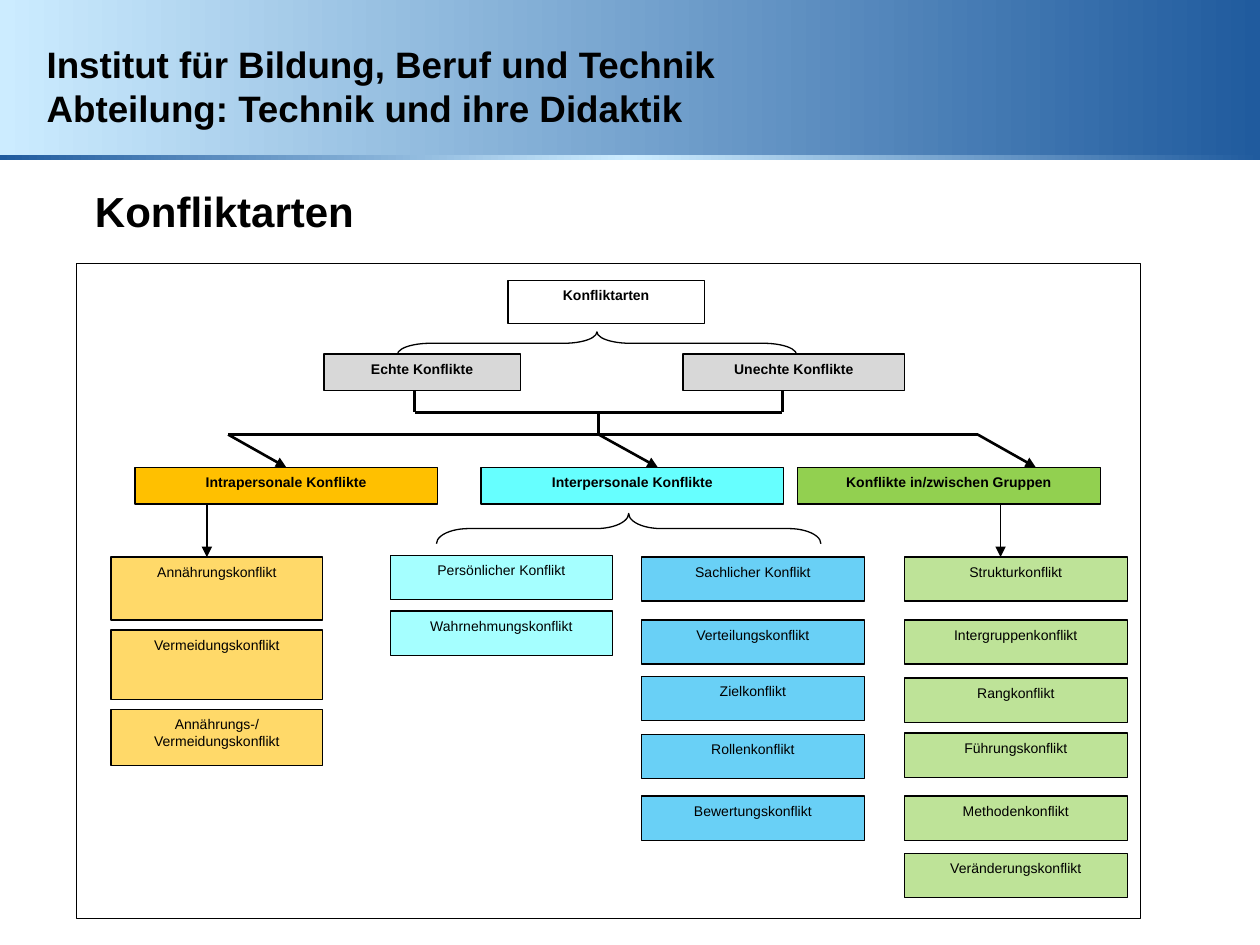
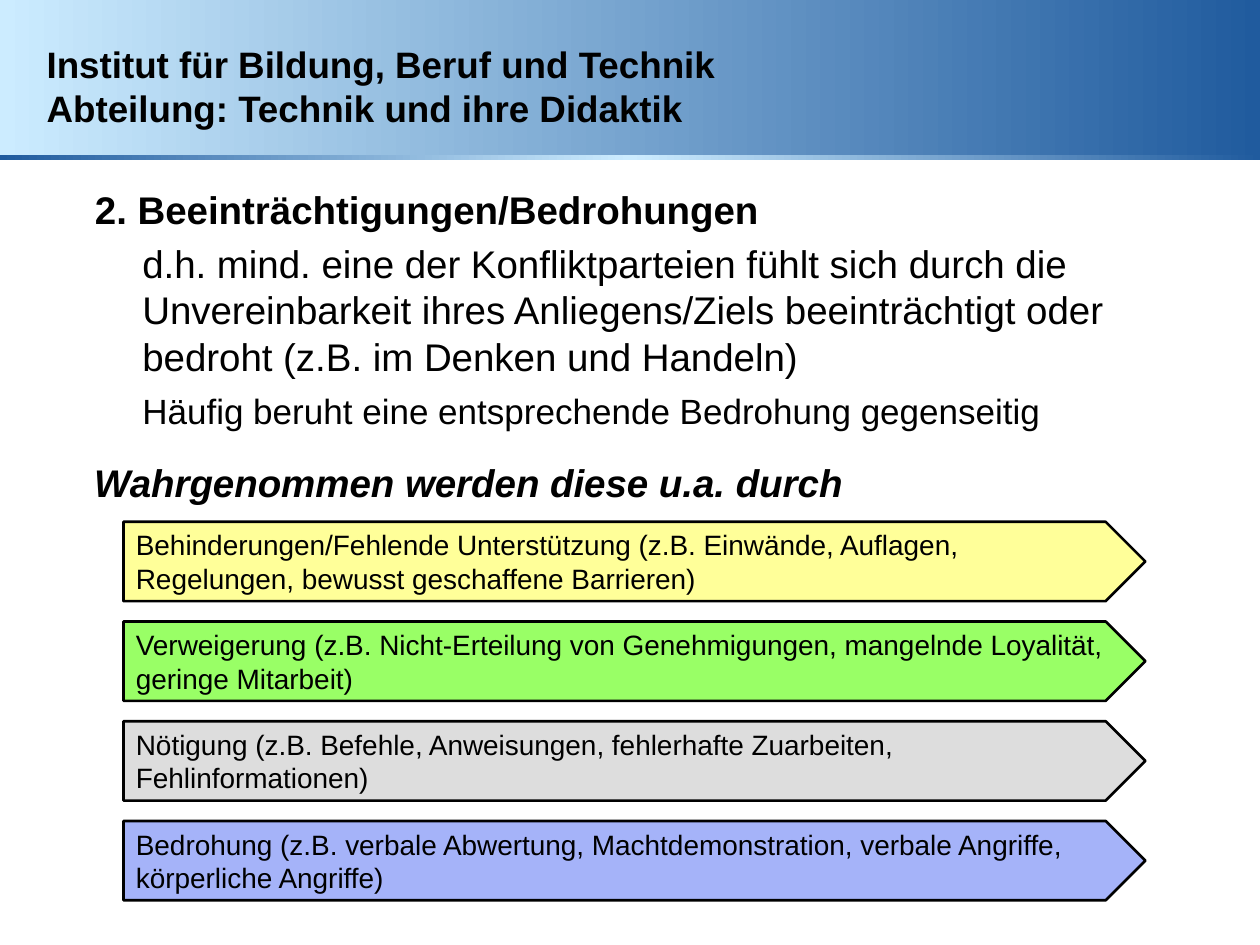
from dataclasses import dataclass
from typing import NamedTuple

from lxml.etree import SubElement
from pptx import Presentation
from pptx.dml.color import RGBColor
from pptx.enum.shapes import MSO_CONNECTOR, MSO_SHAPE
from pptx.enum.text import MSO_ANCHOR, MSO_AUTO_SIZE, PP_ALIGN
from pptx.oxml.ns import qn
from pptx.util import Cm, Pt

RECTANGLE = MSO_SHAPE.RECTANGLE
PENTAGON = MSO_SHAPE.PENTAGON
BRACE = MSO_SHAPE.RIGHT_BRACE
STRAIGHT = MSO_CONNECTOR.STRAIGHT
TOP, MIDDLE = MSO_ANCHOR.TOP, MSO_ANCHOR.MIDDLE
LEFT, CENTER = PP_ALIGN.LEFT, PP_ALIGN.CENTER
NO_AUTOFIT = MSO_AUTO_SIZE.NONE
TITLE_ONLY = 5
TOP_SIDE = 0


@dataclass(frozen=True)
class Theme:
    font: str = "Arial"
    ink: str = "000000"
    paper: str = "FFFFFF"
    sky: str = "CCECFF"
    navy: str = "205B9E"
    grey: str = "D8D8D8"
    amber: str = "FFC000"
    cyan: str = "66FFFF"
    blue: str = "00B0F0"
    green: str = "92D050"
    yellow: str = "FFFF99"
    lime: str = "99FF66"
    silver: str = "DDDDDD"
    lilac: str = "A5B3F9"
    tint: int = 59
    topic: float = 24
    header: float = 21
    body: float = 22
    remark: float = 20
    sign: float = 16
    node: float = 8
    thin: float = 0.75
    thick: float = 1.5


THEME = Theme()


class Box(NamedTuple):
    left: float
    top: float
    width: float
    height: float

    def lengths(self) -> tuple:
        return tuple(Cm(value) for value in self)


class Node(NamedTuple):
    text: str
    box: Box
    fill: str


class Card(NamedTuple):
    text: str
    top: float
    height: float = 0.89


class Column(NamedTuple):
    left: float
    width: float
    fill: str
    cards: tuple


class Link(NamedTuple):
    x1: float
    y1: float
    x2: float
    y2: float
    weight: float = THEME.thick
    arrow: bool = False


class Brace(NamedTuple):
    box: Box
    curl: float


class Sign(NamedTuple):
    text: str
    fill: str


HEADER = ("Institut für Bildung, Beruf und Technik",
          "Abteilung: Technik und ihre Didaktik")
HEADER_BOX = Box(0.69, 0.53, 16.28, 2.39)
TITLE_BOX = Box(1.66, 3.62, 21.6, 1.2)
BAND = Box(0, 0, 25.4, 3.2)
STRIP = Box(0, 3.12, 25.4, 0.1)

CHART_FRAME = Box(1.55, 5.31, 21.44, 13.21)
INTRAPERSONAL = Node("Intrapersonale Konflikte", Box(2.72, 9.42, 6.1, 0.74), THEME.amber)
NODES = (
    Node("Konfliktarten", Box(10.24, 5.66, 3.96, 0.86), THEME.paper),
    Node("Echte Konflikte", Box(6.53, 7.14, 3.96, 0.74), THEME.grey),
    Node("Unechte Konflikte", Box(13.77, 7.14, 4.47, 0.74), THEME.grey),
    Node("Interpersonale Konflikte", Box(9.7, 9.42, 6.1, 0.74), THEME.cyan),
    Node("Konflikte in/zwischen Gruppen", Box(16.08, 9.42, 6.1, 0.74), THEME.green),
)
COLUMNS = (
    Column(2.24, 4.27, THEME.amber, (
        Card("Annährungskonflikt", 11.23, 1.27),
        Card("Vermeidungskonflikt", 12.7, 1.4),
        Card("Annährungs-/Vermeidungskonflikt", 14.3, 1.14),
    )),
    Column(7.87, 4.48, THEME.cyan, (
        Card("Persönlicher Konflikt", 11.2),
        Card("Wahrnehmungskonflikt", 12.32),
    )),
    Column(12.93, 4.5, THEME.blue, (
        Card("Sachlicher Konflikt", 11.23),
        Card("Verteilungskonflikt", 12.5),
        Card("Zielkonflikt", 13.64),
        Card("Rollenkonflikt", 14.81),
        Card("Bewertungskonflikt", 16.05),
    )),
    Column(18.23, 4.5, THEME.green, (
        Card("Strukturkonflikt", 11.23),
        Card("Intergruppenkonflikt", 12.5),
        Card("Rangkonflikt", 13.67),
        Card("Führungskonflikt", 14.78),
        Card("Methodenkonflikt", 16.05),
        Card("Veränderungskonflikt", 17.2),
    )),
)
BRACES = (
    Brace(Box(8.01, 6.69, 8.05, 0.46), 1.446),
    Brace(Box(8.8, 10.35, 7.75, 0.61), 1.069),
)
INTRAPERSONAL_LINK = Link(4.6, 8.76, 5.77, 9.42, arrow=True)
LINKS = (
    Link(8.36, 7.88, 8.36, 8.31),
    Link(15.77, 7.88, 15.77, 8.31),
    Link(8.36, 8.31, 15.77, 8.31),
    Link(12.07, 8.31, 12.07, 8.76),
    Link(4.6, 8.76, 19.71, 8.76),
    Link(12.07, 8.76, 13.26, 9.42, arrow=True),
    Link(19.71, 8.76, 20.88, 9.42, arrow=True),
    Link(4.17, 10.16, 4.17, 11.23, THEME.thin, True),
    Link(20.17, 10.16, 20.17, 11.23, THEME.thin, True),
)

EXPLANATION_BOX = Box(1.65, 4.72, 22.2, 5.7)
FIRST_SIGN = Box(2.49, 10.52, 20.6, 1.6)
SIGN_STEP = 2.01
SIGNS = (
    Sign("Behinderungen/Fehlende Unterstützung (z.B. Einwände, Auflagen, "
         "Regelungen, bewusst geschaffene Barrieren)", THEME.yellow),
    Sign("Verweigerung (z.B. Nicht-Erteilung von Genehmigungen, mangelnde "
         "Loyalität, geringe Mitarbeit)", THEME.lime),
    Sign("Nötigung (z.B. Befehle, Anweisungen, fehlerhafte Zuarbeiten, "
         "Fehlinformationen)", THEME.silver),
    Sign("Bedrohung (z.B. verbale Abwertung, Machtdemonstration, verbale "
         "Angriffe, körperliche Angriffe)", THEME.lilac),
)


def rgb(colour: str) -> RGBColor:
    return RGBColor.from_string(colour)


def write(frame, text: str, *, size: float, bold=False, italic=False,
          align=LEFT, anchor=TOP, indent: float = 0, before: float = 0) -> None:
    frame.word_wrap = True
    frame.auto_size = NO_AUTOFIT
    frame.vertical_anchor = anchor
    paragraph = frame.add_paragraph() if frame.text else frame.paragraphs[0]
    paragraph.alignment = align
    paragraph.space_before = Pt(before)
    if indent:
        paragraph._p.get_or_add_pPr().set("marL", str(Cm(indent)))
    run = paragraph.add_run()
    run.text = text
    run.font.name = THEME.font
    run.font.size = Pt(size)
    run.font.bold = bold
    run.font.italic = italic
    run.font.color.rgb = rgb(THEME.ink)


def add_outline(slide, kind, box: Box, *, fill: str = "", opacity: int = 100,
                weight: float = THEME.thin):
    outline = slide.shapes.add_shape(kind, *box.lengths())
    outline.shadow.inherit = False
    outline.line.color.rgb = rgb(THEME.ink)
    outline.line.width = Pt(weight)
    if not fill:
        outline.fill.background()
        return outline
    outline.fill.solid()
    outline.fill.fore_color.rgb = rgb(fill)
    if opacity < 100:
        colour = outline.element.spPr.find(qn("a:solidFill"))[0]
        SubElement(colour, qn("a:alpha"), val=str(opacity * 1000))
    return outline


def add_node(slide, node: Node, *, bold=True, opacity: int = 100):
    outline = add_outline(slide, RECTANGLE, node.box, fill=node.fill, opacity=opacity)
    write(outline.text_frame, node.text, size=THEME.node, bold=bold, align=CENTER)
    return outline


def add_gradient(slide, box: Box, colours: tuple) -> None:
    band = slide.shapes.add_shape(RECTANGLE, *box.lengths())
    band.shadow.inherit = False
    band.line.fill.background()
    band.fill.gradient()
    band.fill.gradient_angle = 0
    stops = band.element.spPr.find(qn("a:gradFill")).find(qn("a:gsLst"))
    stops.clear()
    for index, colour in enumerate(colours):
        position = 100000 * index // (len(colours) - 1)
        stop = SubElement(stops, qn("a:gs"), pos=str(position))
        SubElement(stop, qn("a:srgbClr"), val=colour)


def add_link(slide, link: Link):
    ends = (Cm(value) for value in link[:4])
    connector = slide.shapes.add_connector(STRAIGHT, *ends)
    connector.line.color.rgb = rgb(THEME.ink)
    connector.line.width = Pt(link.weight)
    properties = connector.element.spPr
    if link.arrow:
        SubElement(properties.find(qn("a:ln")), qn("a:tailEnd"), type="triangle")
    SubElement(properties, qn("a:effectLst"))
    return connector


def add_brace(slide, brace: Brace) -> None:
    left, top, width, height = brace.box
    shift = (width - height) / 2
    upright = Box(left + shift, top - shift, height, width)
    outline = add_outline(slide, BRACE, upright)
    outline.rotation = 270
    outline.adjustments[0] = brace.curl


def start_slide(deck, topic: str, size: float):
    slide = deck.slides.add_slide(deck.slide_layouts[TITLE_ONLY])
    add_gradient(slide, BAND, (THEME.sky, THEME.navy))
    add_gradient(slide, STRIP, (THEME.navy, THEME.sky, THEME.navy))
    header = slide.shapes.add_textbox(*HEADER_BOX.lengths())
    for line in HEADER:
        write(header.text_frame, line, size=THEME.header, bold=True, anchor=MIDDLE)
    title = slide.shapes.title
    title.left, title.top, title.width, title.height = TITLE_BOX.lengths()
    write(title.text_frame, topic, size=size, bold=True)
    return slide


def build_conflict_types(deck) -> None:
    slide = start_slide(deck, "Konfliktarten", THEME.topic)
    add_outline(slide, RECTANGLE, CHART_FRAME)
    for node in NODES:
        add_node(slide, node)
    intrapersonal = add_node(slide, INTRAPERSONAL)
    for column in COLUMNS:
        for card in column.cards:
            box = Box(column.left, card.top, column.width, card.height)
            add_node(slide, Node(card.text, box, column.fill),
                     bold=False, opacity=THEME.tint)
    for brace in BRACES:
        add_brace(slide, brace)
    for link in LINKS:
        add_link(slide, link)
    add_link(slide, INTRAPERSONAL_LINK).end_connect(intrapersonal, TOP_SIDE)


def build_threats(deck) -> None:
    slide = start_slide(deck, "2. Beeinträchtigungen/Bedrohungen", THEME.body)
    explanation = slide.shapes.add_textbox(*EXPLANATION_BOX.lengths()).text_frame
    write(explanation, "d.h. mind. eine der Konfliktparteien fühlt sich durch die "
          "Unvereinbarkeit ihres Anliegens/Ziels beeinträchtigt oder bedroht "
          "(z.B. im Denken und Handeln)", size=THEME.body, indent=0.97)
    write(explanation, "Häufig beruht eine entsprechende Bedrohung gegenseitig",
          size=THEME.remark, indent=0.97, before=6)
    write(explanation, "Wahrgenommen werden diese u.a. durch",
          size=THEME.body, bold=True, italic=True, before=15.6)
    for row, sign in enumerate(SIGNS):
        box = FIRST_SIGN._replace(top=FIRST_SIGN.top + row * SIGN_STEP)
        outline = add_outline(slide, PENTAGON, box, fill=sign.fill, weight=THEME.thick)
        write(outline.text_frame, sign.text, size=THEME.sign, anchor=MIDDLE)


def main() -> None:
    deck = Presentation()
    deck.slide_width, deck.slide_height = Cm(25.4), Cm(19.05)
    build_conflict_types(deck)
    build_threats(deck)
    deck.save("out.pptx")


if __name__ == "__main__":
    main()
